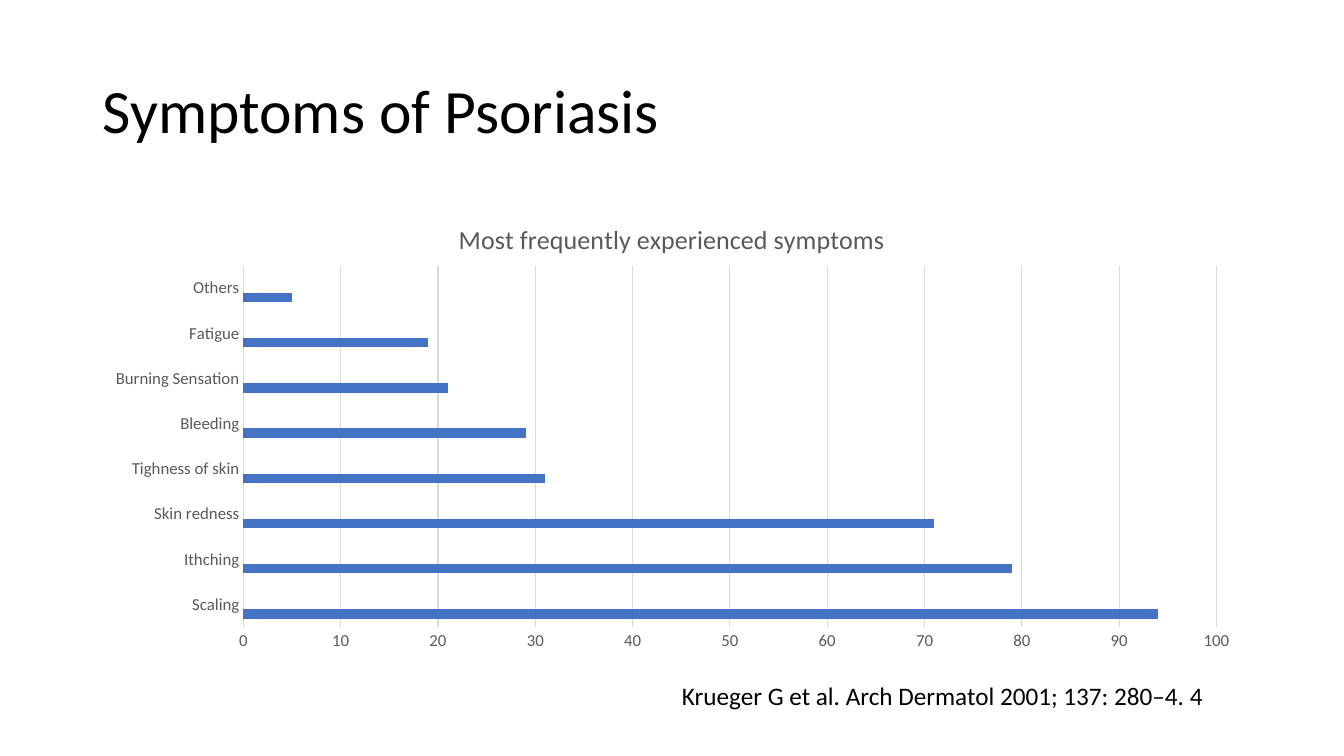
import pptx
import pptx.chart.data
import pptx.dml.color
import pptx.enum.chart
import pptx.enum.text
import pptx.oxml
import pptx.oxml.ns
import pptx.util

WIDTH, HEIGHT = 13.33, 7.5
MARGIN = 0.92
CONTENT_WIDTH = WIDTH - 2 * MARGIN
FONT = "Calibri"
COLORS = {"text": "000000", "label": "595959", "grid": "D9D9D9",
          "series": ["4472C4", "ED7D31", "A5A5A5"]}
SYMPTOMS = {"Scaling": 94, "Ithching": 79, "Skin redness": 71,
            "Tighness of skin": 31, "Bleeding": 29,
            "Burning Sensation": 21, "Fatigue": 19, "Others": 5}
# Inner plot area as shares of the chart's size
PLOT_AREA = {"x": 0.13, "y": 0.14, "w": 0.84, "h": 0.79}


def rgb(value):
    return pptx.dml.color.RGBColor.from_string(value)


def inches(*lengths):
    return [pptx.util.Inches(length) for length in lengths]


def style_font(font, size, color):
    font.name = FONT
    font.size = pptx.util.Pt(size)
    font.bold = False
    font.color.rgb = rgb(color)


def add_text(page, place, text, size, anchor, line_spacing=1.0):
    box = page.shapes.add_textbox(*inches(*place))
    frame = box.text_frame
    frame.word_wrap = True
    frame.vertical_anchor = anchor
    frame.text = text
    para = frame.paragraphs[0]
    para.line_spacing = line_spacing
    style_font(para.runs[0].font, size, COLORS["text"])


def style_axis(axis):
    axis.major_tick_mark = pptx.enum.chart.XL_TICK_MARK.NONE
    axis.minor_tick_mark = pptx.enum.chart.XL_TICK_MARK.NONE
    style_font(axis.tick_labels.font, 12, COLORS["label"])


def style_line(line):
    line.color.rgb = rgb(COLORS["grid"])
    line.width = pptx.util.Pt(0.75)


def set_plot_area(chart, shares):
    plot_area = chart._chartSpace.chart.plotArea
    for layout in plot_area.findall(pptx.oxml.ns.qn("c:layout")):
        plot_area.remove(layout)
    modes = "".join(f'<c:{side}Mode val="edge"/>' for side in "xy")
    sizes = "".join(f'<c:{key} val="{share}"/>' for key, share in shares.items())
    plot_area.insert(0, pptx.oxml.parse_xml(
        f'<c:layout {pptx.oxml.ns.nsdecls("c")}><c:manualLayout>'
        f'<c:layoutTarget val="inner"/>{modes}{sizes}'
        '</c:manualLayout></c:layout>'))


def add_symptom_chart(page, place):
    # Data: only the first series has values
    data = pptx.chart.data.CategoryChartData()
    data.categories = list(SYMPTOMS)
    data.add_series("Series 1", list(SYMPTOMS.values()))
    for name in ("Series 2", "Series 3"):
        data.add_series(name, [None] * len(SYMPTOMS))
    chart = page.shapes.add_chart(
        pptx.enum.chart.XL_CHART_TYPE.BAR_CLUSTERED, *inches(*place), data).chart
    style_font(chart.font, 10, COLORS["text"])
    chart.has_legend = False

    # Title
    chart.has_title = True
    title = chart.chart_title.text_frame
    title.text = "Most frequently experienced symptoms"
    style_font(title.paragraphs[0].runs[0].font, 18.6, COLORS["label"])
    chart.chart_title.include_in_layout = False

    # Bars
    plot = chart.plots[0]
    plot.gap_width = 182
    plot.overlap = 0
    plot.vary_by_categories = False
    for series, color in zip(plot.series, COLORS["series"]):
        series.format.fill.solid()
        series.format.fill.fore_color.rgb = rgb(color)

    # Axes
    style_axis(chart.category_axis)
    style_line(chart.category_axis.format.line)
    values = chart.value_axis
    style_axis(values)
    values.format.line.fill.background()
    values.minimum_scale, values.maximum_scale, values.major_unit = 0, 100, 10
    values.has_major_gridlines = True
    style_line(values.major_gridlines.format.line)
    set_plot_area(chart, PLOT_AREA)


def main():
    deck = pptx.Presentation()
    deck.slide_width, deck.slide_height = inches(WIDTH, HEIGHT)
    page = deck.slides.add_slide(deck.slide_layouts[6])
    anchors = pptx.enum.text.MSO_ANCHOR

    # Heading, chart and citation
    add_text(page, (MARGIN, 0.4, CONTENT_WIDTH, 1.45),
             "Symptoms of Psoriasis", 44, anchors.MIDDLE, 0.9)
    add_symptom_chart(page, (MARGIN, 2, CONTENT_WIDTH, 4.54))
    add_text(page, (WIDTH / 2, 6.7, WIDTH / 2, 0.4),
             "Krueger G et al. Arch Dermatol 2001; 137: 280–4. 4", 18, anchors.TOP)
    deck.save("out.pptx")


if __name__ == "__main__":
    main()
